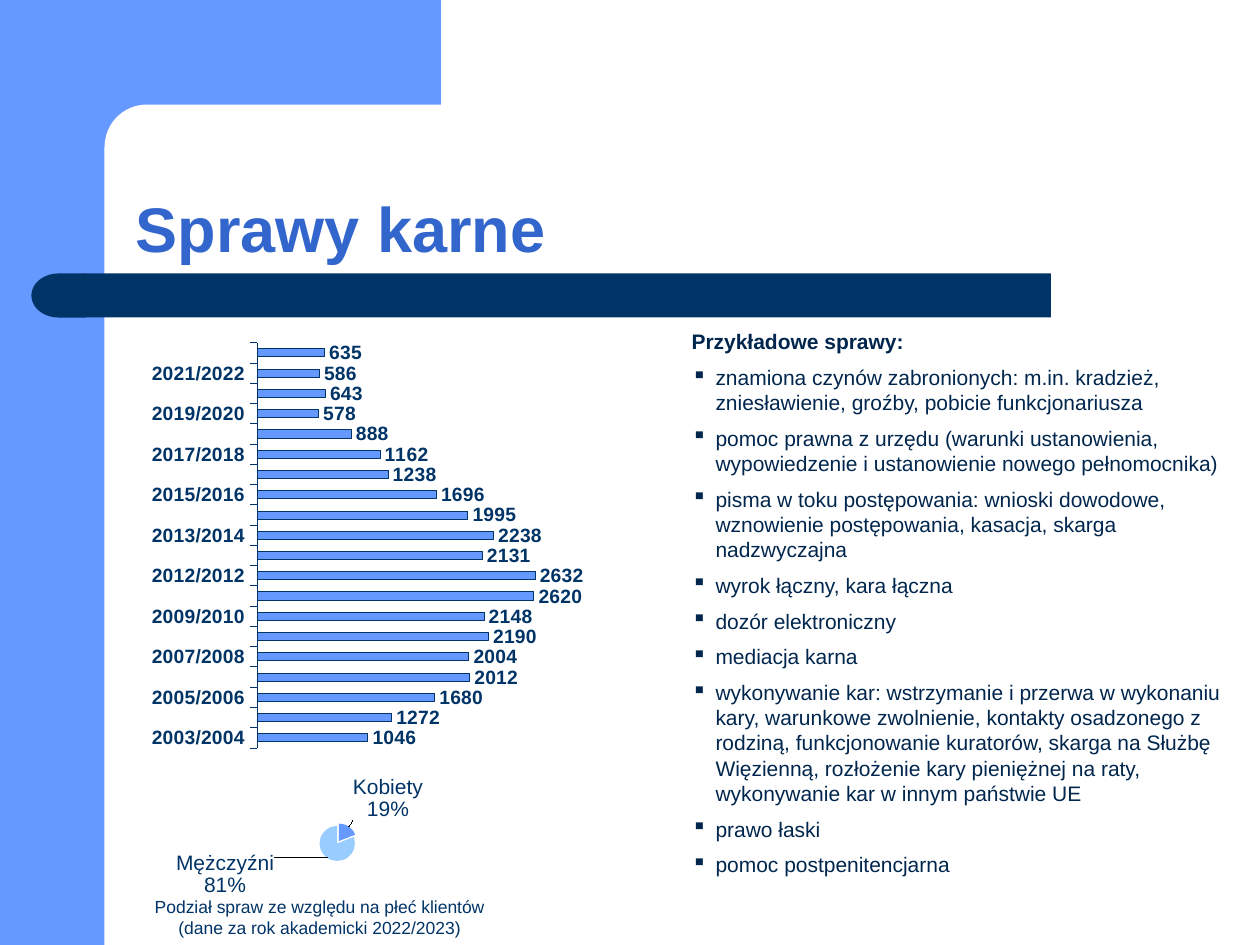
from lxml import etree
from pptx import Presentation, util as u
from pptx.chart.data import CategoryChartData
from pptx.dml.color import RGBColor
from pptx.enum import chart as charts, shapes, text
from pptx.oxml import parse_xml
from pptx.oxml.ns import nsdecls, qn

FONT = "Arial"
BLUE, PALE, NAVY, INK, TITLE, WHITE = "6699FF", "99CCFF", "003366", "00264D", "3366CC", "FFFFFF"

# Content
HEADING = "Sprawy karne"
EXAMPLES_HEADING = "Przykładowe sprawy:"
EXAMPLES = [
    "znamiona czynów zabronionych: m.in. kradzież, zniesławienie, groźby, pobicie funkcjonariusza",
    "pomoc prawna z urzędu (warunki ustanowienia, wypowiedzenie i ustanowienie nowego pełnomocnika)",
    "pisma w toku postępowania: wnioski dowodowe, wznowienie postępowania, kasacja, skarga nadzwyczajna",
    "wyrok łączny, kara łączna",
    "dozór elektroniczny",
    "mediacja karna",
    "wykonywanie kar: wstrzymanie i przerwa w wykonaniu kary, warunkowe zwolnienie, kontakty osadzonego "
    "z rodziną, funkcjonowanie kuratorów, skarga na Służbę Więzienną, rozłożenie kary pieniężnej na raty, "
    "wykonywanie kar w innym państwie UE",
    "prawo łaski",
    "pomoc postpenitencjarna",
]
CAPTION = "Podział spraw ze względu na płeć klientów (dane za rok akademicki 2022/2023)"
CASES = {
    "2003/2004": 1046, "2004/2005": 1272, "2005/2006": 1680, "2006/2007": 2012,
    "2007/2008": 2004, "2008/2009": 2190, "2009/2010": 2148, "2010/2011": 2620,
    "2012/2012": 2632, "2012/2013": 2131, "2013/2014": 2238, "2014/2015": 1995,
    "2015/2016": 1696, "2016/2017": 1238, "2017/2018": 1162, "2018/2019": 888,
    "2019/2020": 578, "2020/2021": 643, "2021/2022": 586, "2022/2023": 635,
}
GENDER = {"Kobiety": 19, "Mężczyźni": 81}
GENDER_COLORS = [BLUE, PALE]
GENDER_LABEL_SHIFTS = [(0, 0), (-0.09, -0.08)]

# Background shapes: preset, box, colour
Preset = shapes.MSO_SHAPE
DECORATION = [
    (Preset.RECTANGLE, (0, 0, 0.83, 7.5), BLUE),
    (Preset.RECTANGLE, (0.75, 0, 2.75, 1.17), BLUE),
    (Preset.ROUNDED_RECTANGLE, (0.83, 0.83, 5.58, 0.67), WHITE),
    (Preset.RECTANGLE, (0.67, 2.17, 7.67, 0.35), NAVY),
    (Preset.FLOWCHART_DELAY, (0.25, 2.17, 0.43, 0.35), NAVY),
]


def rgb(color):
    return RGBColor.from_string(color)


def inches(box):
    return [u.Inches(length) for length in box]


def paint(part, color, line=None):
    part.fill.solid()
    part.fill.fore_color.rgb = rgb(color)
    if line:
        part.line.color.rgb = rgb(line)
        part.line.width = u.Pt(0.25)
    else:
        part.line.fill.background()


def style(font, size, color, bold=False):
    font.name, font.size, font.bold = FONT, u.Pt(size), bold
    font.color.rgb = rgb(color)


def add_text(slide, box, lines, size, color, bold=False):
    frame = slide.shapes.add_textbox(*inches(box)).text_frame
    frame.word_wrap = True
    frame.text = "\n".join(lines)
    for paragraph in frame.paragraphs:
        style(paragraph.runs[0].font, size, color, bold)
    return frame


def add_bullet(paragraph):
    properties = paragraph._p.get_or_add_pPr()
    indent = u.Inches(0.19)
    properties.set("marL", str(indent))
    properties.set("indent", str(-indent))
    etree.SubElement(properties, qn("a:buChar")).set("char", "▪")


def layout_xml(x, y, width=None, height=None):
    sizes = target = modes = ""
    if width:
        target = '<c:layoutTarget val="inner"/>'
        modes = '<c:xMode val="edge"/><c:yMode val="edge"/>'
        sizes = f'<c:w val="{width}"/><c:h val="{height}"/>'
    return parse_xml(f'<c:layout {nsdecls("c")}><c:manualLayout>{target}{modes}'
                     f'<c:x val="{x}"/><c:y val="{y}"/>{sizes}</c:manualLayout></c:layout>')


def add_chart(slide, kind, box, values, plot_box, size):
    data = CategoryChartData()
    data.categories = list(values)
    data.add_series("Series 1", list(values.values()))
    chart = slide.shapes.add_chart(kind, *inches(box), data).chart
    chart.has_legend = chart.has_title = False
    style(chart.font, size, NAVY)
    plot_area = chart._chartSpace.chart.plotArea
    for layout in plot_area.findall(qn("c:layout")):
        plot_area.remove(layout)
    plot_area.insert(0, layout_xml(*plot_box))
    return chart


def add_cases_chart(slide):
    chart = add_chart(slide, charts.XL_CHART_TYPE.BAR_CLUSTERED, (0.83, 2.42, 4.33, 3.74),
                      CASES, (0.28, 0.08, 0.58, 0.86), 11)
    years, counts = chart.category_axis, chart.value_axis
    years.major_tick_mark = charts.XL_TICK_MARK.OUTSIDE
    years.format.line.color.rgb = rgb(NAVY)
    years.format.line.width = u.Pt(0.25)
    style(years.tick_labels.font, 11, NAVY, True)
    counts.minimum_scale, counts.maximum_scale = 0, 3000
    counts.has_major_gridlines = counts.visible = False
    plot = chart.plots[0]
    plot.gap_width, plot.vary_by_categories = 150, False
    paint(plot.series[0].format, BLUE, NAVY)
    plot.has_data_labels = True
    plot.data_labels.show_value = True
    plot.data_labels.position = charts.XL_LABEL_POSITION.OUTSIDE_END
    style(plot.data_labels.font, 11, NAVY, True)


def add_gender_chart(slide):
    chart = add_chart(slide, charts.XL_CHART_TYPE.PIE, (0.41, 6.03, 4.33, 1.18),
                      GENDER, (0.49, 0.43, 0.07, 0.26), 12)
    series = chart.plots[0].series[0]
    for index, color in enumerate(GENDER_COLORS):
        paint(series.points[index].format, color)
    labels = series.data_labels
    labels.show_category_name = labels.show_percentage = True
    labels.show_value = False
    labels.number_format, labels.number_format_is_linked = "0%", False
    labels.position = charts.XL_LABEL_POSITION.OUTSIDE_END
    style(labels.font, 12, NAVY)
    separator = f'<c:separator {nsdecls("c")}>\n</c:separator>'
    for index, shift in enumerate(GENDER_LABEL_SHIFTS):
        label = series.points[index].data_label
        label.position = charts.XL_LABEL_POSITION.OUTSIDE_END
        element = label._dLbl
        element.find(qn("c:idx")).addnext(layout_xml(*shift))
        for flag, shown in (("showVal", 0), ("showCatName", 1), ("showPercent", 1)):
            element.find(qn(f"c:{flag}")).set("val", str(shown))
        element.find(qn("c:showBubbleSize")).addnext(parse_xml(separator))
    group = labels._element
    leader = group.find(qn("c:showLeaderLines"))
    if leader is None:
        leader = etree.SubElement(group, qn("c:showLeaderLines"))
    leader.set("val", "1")
    leader.addprevious(parse_xml(separator))
    explosion = parse_xml(f'<c:explosion {nsdecls("c")} val="8"/>')
    series._element.find(qn("c:dPt")).addprevious(explosion)


def main():
    presentation = Presentation()
    presentation.slide_width, presentation.slide_height = inches((10, 7.5))
    slide = presentation.slides.add_slide(presentation.slide_layouts[6])

    # Background
    for preset, box, color in DECORATION:
        shape = slide.shapes.add_shape(preset, *inches(box))
        shape.shadow.inherit = False
        paint(shape, color)
        if preset == Preset.ROUNDED_RECTANGLE:
            shape.adjustments[0] = 0.5
        elif preset == Preset.FLOWCHART_DELAY:
            shape._element.spPr.find(qn("a:xfrm")).set("flipH", "1")

    # Title
    title = add_text(slide, (0.98, 0.91, 8.75, 1.25), [HEADING], 36, TITLE, True)
    title.vertical_anchor = text.MSO_ANCHOR.BOTTOM
    title.paragraphs[0].line_spacing = 0.9

    # Example cases
    examples = add_text(slide, (5.39, 2.56, 4.61, 4.64), [EXAMPLES_HEADING] + EXAMPLES, 12, INK)
    heading, *items = examples.paragraphs
    heading.runs[0].font.bold = True
    for paragraph in items:
        paragraph.space_before = u.Pt(6)
        add_bullet(paragraph)

    # Charts and caption
    caption = add_text(slide, (0.98, 7.06, 3.11, 0.44), [CAPTION], 10, NAVY)
    caption.paragraphs[0].alignment = text.PP_ALIGN.CENTER
    add_cases_chart(slide)
    add_gender_chart(slide)
    presentation.save("out.pptx")


if __name__ == "__main__":
    main()
